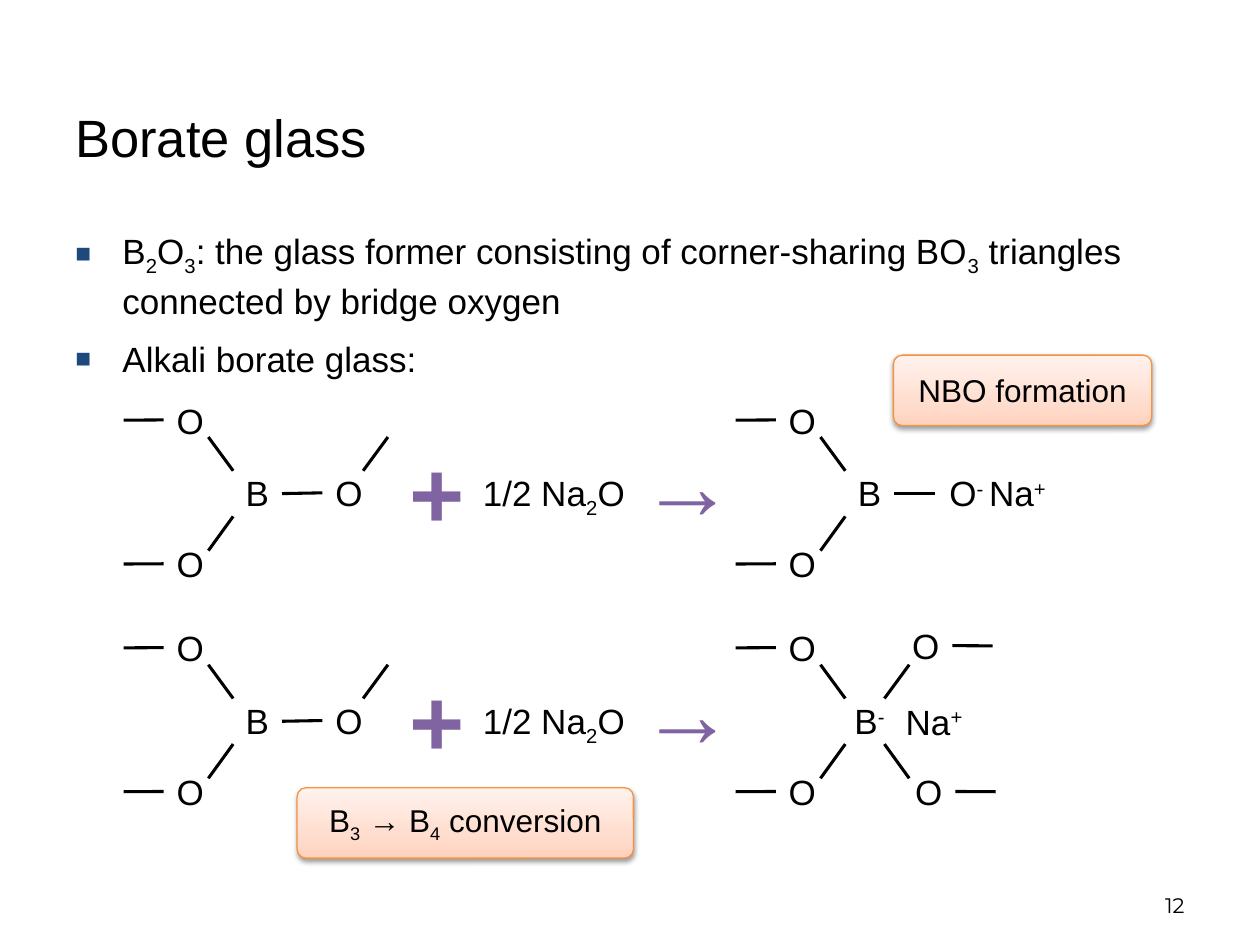
from dataclasses import dataclass

from lxml import etree
from pptx import Presentation
from pptx.dml.color import RGBColor
from pptx.enum import shapes, text
from pptx.oxml import parse_xml
from pptx.oxml.ns import nsdecls, qn
from pptx.util import Cm, Pt

TOP, LEFT, BOTTOM, RIGHT = range(4)
ALIGN = text.PP_ALIGN
ANCHOR = text.MSO_ANCHOR


@dataclass(frozen=True)
class Theme:
    font: str = "Arial"
    number_font: str = "Montserrat"
    ink: str = "000000"
    operator: str = "8064A2"
    bullet: str = "1F497D"
    label_line: str = "F69240"
    label_stops: tuple = ((0, "FFD2BD"), (35, "FFDED0"), (100, "FFF2ED"))
    title_size: int = 30
    body_size: int = 20
    label_size: int = 18
    operator_size: int = 54
    number_size: int = 12
    bond_width: float = 1.75


@dataclass(frozen=True)
class Run:
    text: str
    baseline: int = 0


@dataclass(frozen=True)
class Box:
    left: float
    top: float
    width: float
    height: float

    def lengths(self, x: float = 0, y: float = 0) -> tuple:
        return Cm(self.left + x), Cm(self.top + y), Cm(self.width), Cm(self.height)


@dataclass(frozen=True)
class Label:
    box: Box
    runs: tuple


def sub(value: str) -> Run:
    return Run(value, -25)


def sup(value: str) -> Run:
    return Run(value, 30)


THEME = Theme()
OXYGEN = (Run("O"),)
BORON = (Run("B"),)
BORON_ION = (Run("B"), sup("-"))
SODIUM_ION = (Run("Na"), sup("+"))
OXYGEN_SODIUM = (Run("O"), sup("- "), Run("Na"), sup("+"))
SODIUM_OXIDE = (Run("1/2 Na"), sub("2"), Run("O"))

BULLETS = (
    (Run("B"), sub("2"), Run("O"), sub("3"),
     Run(": the glass former consisting of corner-sharing BO"), sub("3"),
     Run(" triangles connected by bridge oxygen")),
    (Run("Alkali borate glass:"),),
)
LABELS = (
    Label(Box(18.01, 7.16, 5.21, 1.42), (Run("NBO formation"),)),
    Label(Box(5.99, 15.88, 6.78, 1.42),
          (Run("B"), sub("3"), Run(" → B"), sub("4"), Run(" conversion"))),
)

REACTANT_X, PRODUCT_X = 2.49, 14.83
ROW_Y = (7.92, 12.51)
MIDDLE, LOWER = 1.47, 2.9  # atom tops below the top of a molecule
STUB = 0.81


def add_runs(paragraph, runs: tuple, size: float, color: str = THEME.ink,
             font: str = THEME.font, bold: bool = False) -> None:
    for item in runs:
        run = paragraph.add_run()
        run.text = item.text
        run.font.name, run.font.size, run.font.bold = font, Pt(size), bold
        run.font.color.rgb = RGBColor.from_string(color)
        if item.baseline:
            run.font._element.set("baseline", str(item.baseline * 1000))


def add_text(slide, box: Box, runs: tuple, size: float, align=ALIGN.LEFT,
             anchor=ANCHOR.MIDDLE, font: str = THEME.font):
    shape = slide.shapes.add_textbox(*box.lengths())
    frame = shape.text_frame
    frame.word_wrap, frame.vertical_anchor = True, anchor
    paragraph = frame.paragraphs[0]
    paragraph.alignment = align
    add_runs(paragraph, runs, size, font=font)
    return shape


def add_symbol(slide, x: float, y: float, box: Box, runs: tuple,
               size: float = THEME.body_size, color: str = THEME.ink, bold: bool = False):
    """Add a formula or operator whose box fits its text."""
    shape = slide.shapes.add_textbox(*box.lengths(x, y))
    frame = shape.text_frame
    frame.word_wrap, frame.auto_size = False, text.MSO_AUTO_SIZE.SHAPE_TO_FIT_TEXT
    frame.paragraphs[0].alignment = ALIGN.CENTER
    add_runs(frame.paragraphs[0], runs, size, color, bold=bold)
    return shape


def add_bond(slide, x1: float, y1: float, x2: float, y2: float):
    bond = slide.shapes.add_connector(shapes.MSO_CONNECTOR.STRAIGHT,
                                      Cm(x1), Cm(y1), Cm(x2), Cm(y2))
    bond.line.color.rgb = RGBColor.from_string(THEME.ink)
    bond.line.width = Pt(THEME.bond_width)
    etree.SubElement(bond._element.spPr, qn("a:effectLst"))
    return bond


def add_oxygen(slide, x: float, y: float, stub_side=None):
    """Add an oxygen, with an open bond on its left or right if asked."""
    oxygen = add_symbol(slide, x, y, Box(0, 0, 1.07, 1.09), OXYGEN)
    if stub_side is not None:
        end = x - STUB if stub_side == LEFT else x + 1.07 + STUB
        bond = add_bond(slide, end, y + 0.55, x, y + 0.55)
        bond.end_connect(oxygen, stub_side)
    return oxygen


def add_slants(slide, x: float, y: float, direction: int) -> None:
    """Add the upper and lower bonds leaving boron to one side (-1 or 1)."""
    for near, far in ((1.57, 0.89), (2.49, 3.18)):
        add_bond(slide, x, y + near, x + direction * 0.5, y + far)


def add_boron_core(slide, x: float, y: float, runs: tuple = BORON):
    """Add boron with its two oxygens on the left."""
    for top in (0, LOWER):
        add_oxygen(slide, x + STUB, y + top, LEFT)
    add_slants(slide, x + 2.21, y, -1)
    width = 0.99 if runs == BORON else 1.14
    return add_symbol(slide, x + 2.7 - width / 2, y + MIDDLE, Box(0, 0, width, 1.12), runs)


def join(slide, boron, neighbour, x: float, y: float) -> None:
    bond = add_bond(slide, x + 3.2, y + 2.03, x + 4.01, y + 2.03)
    bond.begin_connect(boron, RIGHT)
    bond.end_connect(neighbour, LEFT)


def add_reactants(slide, y: float) -> None:
    x = REACTANT_X
    boron = add_boron_core(slide, x, y)
    join(slide, boron, add_oxygen(slide, x + 4.01, y + MIDDLE), x, y)
    add_bond(slide, x + 4.83, y + 1.57, x + 5.33, y + 0.89)
    add_symbol(slide, 0, y, Box(9.45, MIDDLE, 3.43, 1.12), SODIUM_OXIDE)
    for sign, box in (("+", Box(8, 0.71, 1.63, 2.57)), ("→", Box(12.65, 0.53, 2.44, 2.57))):
        add_symbol(slide, 0, y, box, (Run(sign),), THEME.operator_size, THEME.operator, True)


def add_nbo_product(slide, y: float) -> None:
    x = PRODUCT_X
    boron = add_boron_core(slide, x, y)
    ions = add_symbol(slide, x, y, Box(4.01, MIDDLE, 2.54, 1.12), OXYGEN_SODIUM)
    join(slide, boron, ions, x, y)


def add_b4_product(slide, y: float) -> None:
    x = PRODUCT_X
    add_boron_core(slide, x, y, BORON_ION)
    add_slants(slide, x + 3, y, 1)
    add_oxygen(slide, x + 3.3, y - 0.04, RIGHT)
    add_oxygen(slide, x + 3.36, y + LOWER, RIGHT)
    add_symbol(slide, x, y, Box(3.15, MIDDLE + 0.01, 1.7, 1.12), SODIUM_ION)


def add_label(slide, label: Label) -> None:
    shape = slide.shapes.add_shape(shapes.MSO_SHAPE.ROUNDED_RECTANGLE, *label.box.lengths())
    shape.adjustments[0] = 0.127
    shape.line.color.rgb = RGBColor.from_string(THEME.label_line)
    shape.line.width = Pt(0.75)
    stops = "".join(f'<a:gs pos="{place * 1000}"><a:srgbClr val="{color}"/></a:gs>'
                    for place, color in THEME.label_stops)
    properties = shape._element.spPr
    properties.find(qn("a:ln")).addprevious(parse_xml(
        f'<a:gradFill {nsdecls("a")} rotWithShape="1"><a:gsLst>{stops}</a:gsLst>'
        '<a:lin ang="16200000" scaled="0"/></a:gradFill>'))
    properties.append(parse_xml(
        f'<a:effectLst {nsdecls("a")}><a:outerShdw blurRad="{Pt(3.1)}" dist="{Pt(1.6)}" '
        f'dir="5400000" rotWithShape="0"><a:srgbClr val="{THEME.ink}">'
        '<a:alpha val="38000"/></a:srgbClr></a:outerShdw></a:effectLst>'))
    shape.text_frame.vertical_anchor = ANCHOR.MIDDLE
    paragraph = shape.text_frame.paragraphs[0]
    paragraph.alignment = ALIGN.CENTER
    add_runs(paragraph, label.runs, THEME.label_size)


def add_bullets(slide) -> None:
    frame = slide.shapes.add_textbox(*Box(1.27, 4.45, 22.43, 11.86).lengths()).text_frame
    frame.word_wrap = True
    for index, runs in enumerate(BULLETS):
        paragraph = frame.add_paragraph() if index else frame.paragraphs[0]
        properties = paragraph._p.get_or_add_pPr()
        properties.set("marL", str(Cm(0.95)))
        properties.set("indent", str(-Cm(0.95)))
        color = etree.SubElement(properties, qn("a:buClr"))
        etree.SubElement(color, qn("a:srgbClr"), val=THEME.bullet)
        etree.SubElement(properties, qn("a:buSzPct"), val="75000")
        etree.SubElement(properties, qn("a:buFont"), typeface=THEME.font)
        etree.SubElement(properties, qn("a:buChar"), char="■")
        paragraph.line_spacing = 1.05
        if index:
            paragraph.space_before = Pt(8)
        add_runs(paragraph, runs, THEME.body_size)


def main() -> None:
    presentation = Presentation()
    presentation.slide_width, presentation.slide_height = Cm(25.4), Cm(19.05)
    slide = presentation.slides.add_slide(presentation.slide_layouts[6])
    add_text(slide, Box(1.27, 1.27, 22.43, 2.97), (Run("Borate glass"),), THEME.title_size)
    add_bullets(slide)
    for y, add_product in zip(ROW_Y, (add_nbo_product, add_b4_product)):
        add_reactants(slide, y)
        add_product(slide, y)
    for label in LABELS:
        add_label(slide, label)
    add_text(slide, Box(18.21, 17.35, 5.92, 1.27), (Run("12"),), THEME.number_size,
             ALIGN.RIGHT, ANCHOR.BOTTOM, THEME.number_font)
    presentation.save("out.pptx")


if __name__ == "__main__":
    main()
